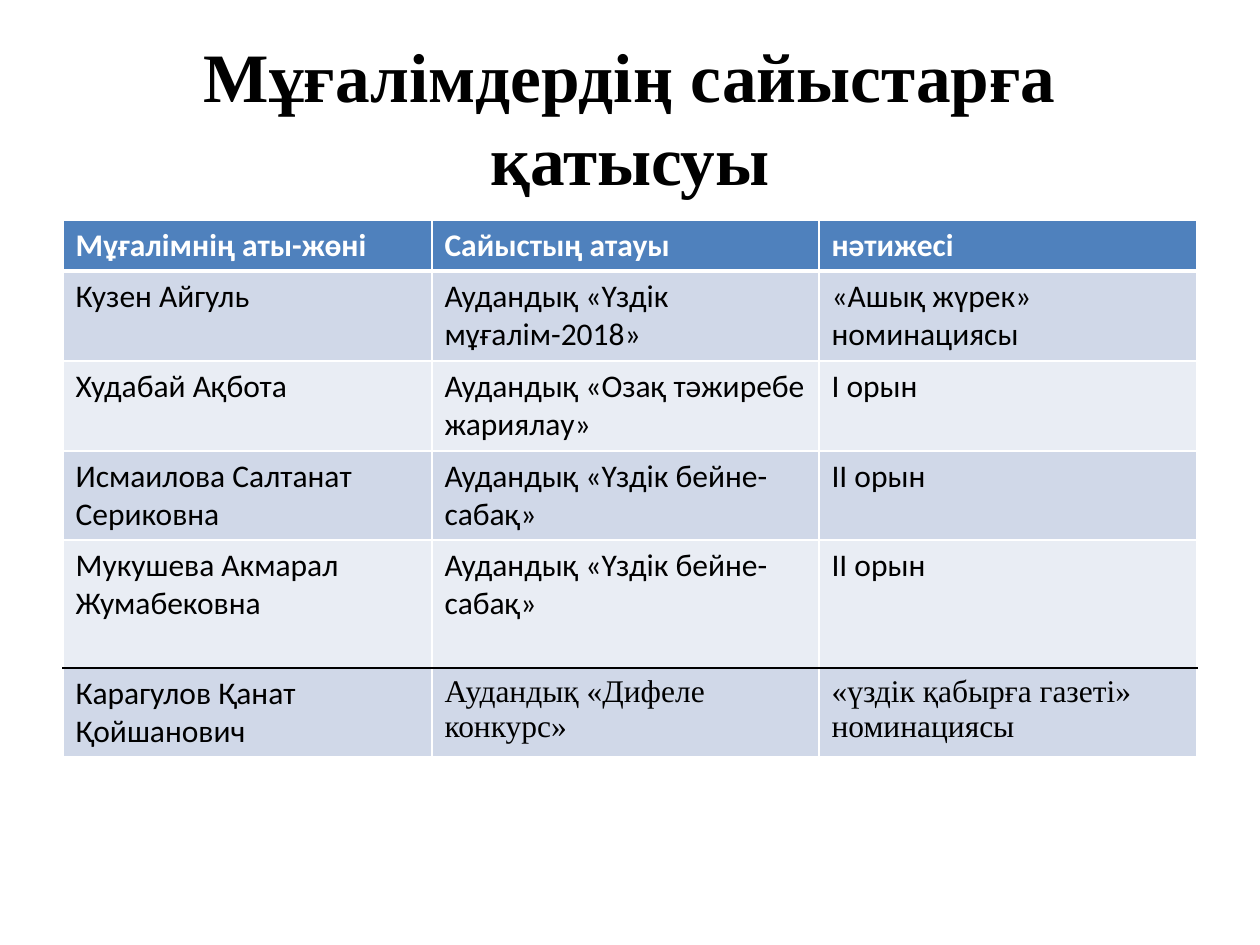
"""Build a slide listing teachers and their contest results."""
import pptx
import pptx.util
import pptx.dml.color
import pptx.enum.text
import pptx.oxml
import pptx.oxml.ns

EMU_PER_PX = 914400 // 126
COLORS = {"header": "4F81BD", "odd": "D0D8E8", "even": "E9EDF4",
          "white": "FFFFFF", "black": "000000"}
SANS, SERIF = "Calibri", "Times New Roman"
TITLE = "Мұғалімдердің сайыстарға қатысуы"
ROWS = [
    ("Мұғалімнің аты-жөні", "Сайыстың атауы", "нәтижесі"),
    ("Кузен Айгуль", "Аудандық «Үздік мұғалім-2018»", "«Ашық жүрек» номинациясы"),
    ("Худабай Ақбота", "Аудандық «Озақ тәжиребе жариялау»", "І орын"),
    ("Исмаилова Салтанат Сериковна", "Аудандық «Үздік бейне-сабақ»", "ІІ орын"),
    ("Мукушева Акмарал Жумабековна", "Аудандық «Үздік бейне-сабақ»", "ІІ орын"),
    ("Карагулов Қанат Қойшанович", "Аудандық «Дифеле конкурс»",
     "«үздік қабырға газеті» номинациясы"),
]
COL_WIDTHS = [369, 387, 378]
ROW_HEIGHTS = [51, 90, 90, 89, 128, 89]
LAST = len(ROWS) - 1


def px(n):
    return pptx.util.Emu(n * EMU_PER_PX)


def rgb(name):
    return pptx.dml.color.RGBColor.from_string(COLORS[name])


def add_run(p, text, size, font, color, bold=False):
    r = p.add_run()
    r.text = text
    r.font.size = pptx.util.Pt(size)
    r.font.name = font
    r.font.bold = bold
    r.font.color.rgb = rgb(color)


def set_borders(cell, top, bottom):
    sides = {"L": ("white", 1), "R": ("white", 1), "T": top, "B": bottom}
    for i, (side, (color, width)) in enumerate(sides.items()):
        cell._tc.get_or_add_tcPr().insert(i, pptx.oxml.parse_xml(
            f'<a:ln{side} {pptx.oxml.ns.nsdecls("a")} w="{pptx.util.Pt(width)}">'
            f'<a:solidFill><a:srgbClr val="{COLORS[color]}"/></a:solidFill></a:ln{side}>'))


def edge_below(row):
    return {0: ("white", 3), LAST - 1: ("black", 1)}.get(row, ("white", 1))


def add_title(s):
    tf = s.shapes.add_textbox(px(63), px(38), px(1134), px(157)).text_frame
    tf.word_wrap = True
    tf.vertical_anchor = pptx.enum.text.MSO_ANCHOR.MIDDLE
    p = tf.paragraphs[0]
    p.alignment = pptx.enum.text.PP_ALIGN.CENTER
    add_run(p, TITLE, 39.6, SERIF, "black", True)


def add_results(s):
    table = s.shapes.add_table(len(ROWS), len(COL_WIDTHS), px(63), px(220),
                               px(sum(COL_WIDTHS)), px(sum(ROW_HEIGHTS))).table
    for column, width in zip(table.columns, COL_WIDTHS):
        column.width = px(width)
    for i, (texts, height) in enumerate(zip(ROWS, ROW_HEIGHTS)):
        table.rows[i].height = px(height)
        header = i == 0
        fill = "header" if header else "odd" if i % 2 else "even"
        for j, text in enumerate(texts):
            cell = table.cell(i, j)
            cell.fill.solid()
            cell.fill.fore_color.rgb = rgb(fill)
            set_borders(cell, edge_below(i - 1), edge_below(i))
            font = SERIF if i == LAST and j > 0 else SANS
            add_run(cell.text_frame.paragraphs[0], text, 18, font,
                    "white" if header else "black", header)


def main():
    prs = pptx.Presentation()
    prs.slide_width, prs.slide_height = px(1260), px(945)
    s = prs.slides.add_slide(prs.slide_layouts[6])
    add_title(s)
    add_results(s)
    prs.save("out.pptx")


if __name__ == "__main__":
    main()
